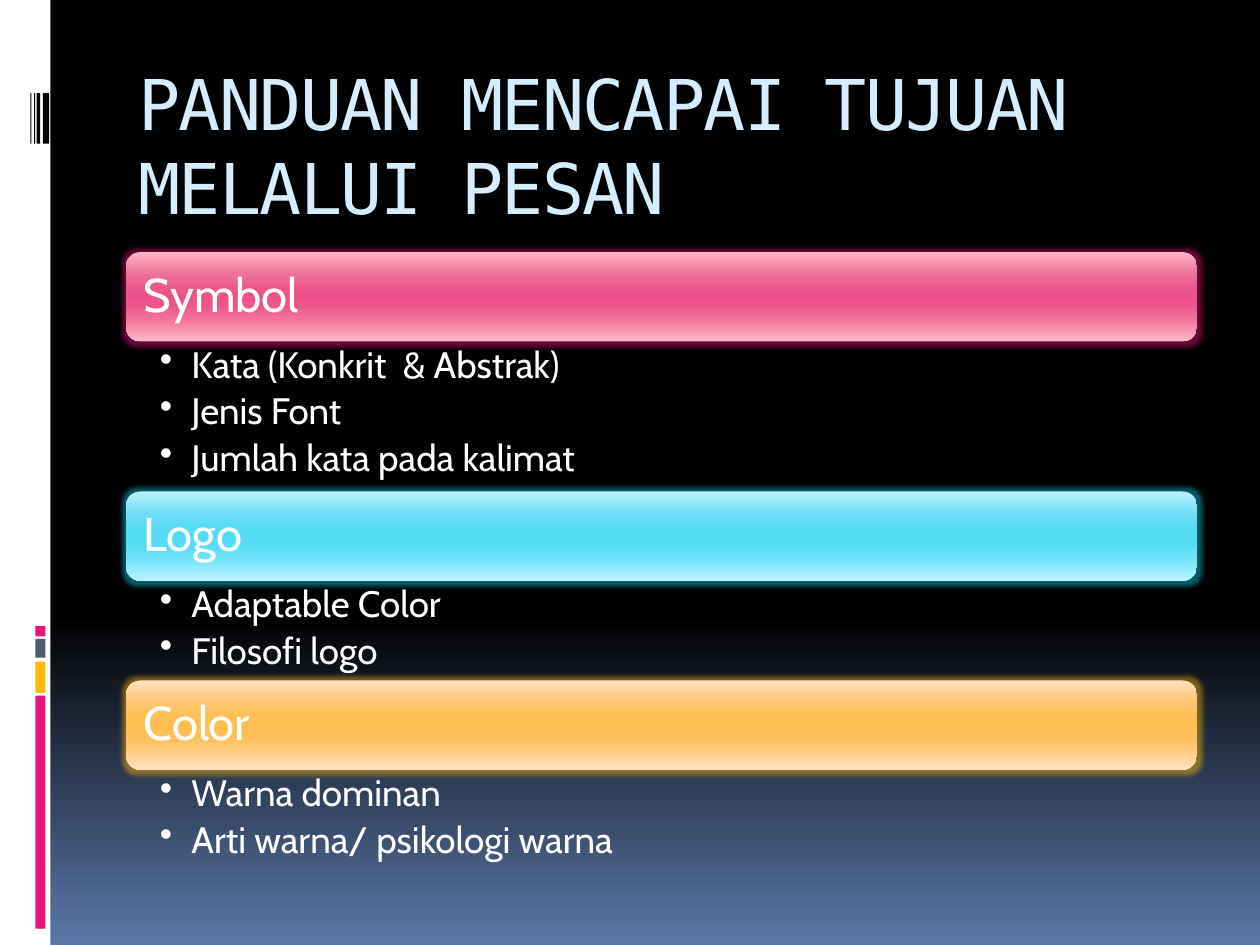
from lxml import etree
from pptx import Presentation
from pptx import util as u
from pptx.dml.color import RGBColor
from pptx.enum import shapes, text
from pptx.oxml import ns

Inches, Pt = u.Inches, u.Pt

WHITE = RGBColor(0xFF, 0xFF, 0xFF)
BLACK = RGBColor(0x00, 0x00, 0x00)
PINK = RGBColor(0xEA, 0x15, 0x7A)
GOLD = RGBColor(0xFE, 0xB8, 0x0A)
SLATE = RGBColor(0x4E, 0x5B, 0x6F)
CYAN = RGBColor(0x10, 0xCF, 0xEB)
PALE = RGBColor(0xD6, 0xEC, 0xFF)
DUSK = RGBColor(0x5B, 0x77, 0xA8)

SANS, MONO = "Cabin", "DejaVu Sans Mono"
BAR_H = 0.71
STOPS = (0, 25, 40, 50, 60, 75, 100)

# Heading, glow, gradient colours, list height, list items
GROUPS = [
    ("Symbol", PINK, "FFB6C9 ED7198 EC568B EC5289 EC568B F2729A FFB6C9", 1.19,
     ["Kata (Konkrit  & Abstrak)", "Jenis Font", "Jumlah kata pada kalimat"]),
    ("Logo", CYAN, "BBF1FF 70DFF6 56DCF5 51DCF5 56DCF5 71E3FB BBF1FF", 0.79,
     ["Adaptable Color", "Filosofi logo"]),
    ("Color", GOLD, "FFE1BF FEC570 FEBF55 FEBE51 FEBF55 FFC775 FFE1BF", 0.79,
     ["Warna dominan", "Arti warna/ psikologi warna"]),
]


def apply(obj, vals):
    for name, val in vals.items():
        setattr(obj, name, val)


def add_xml(parent, tag, **attrs):
    return etree.SubElement(parent, ns.qn(tag), attrs)


def blend(fill, root, stops):
    """Fill from top to bottom with (percent, colour) stops."""
    fill.gradient()
    fill.gradient_angle = 270
    box = root.find(".//" + ns.qn("a:gsLst"))
    for old in list(box):
        box.remove(old)
    for pos, tone in stops:
        stop = add_xml(box, "a:gs", pos=str(pos * 1000))
        add_xml(stop, "a:srgbClr", val=str(tone))


def add_box(slide, kind, box):
    shape = slide.shapes.add_shape(kind, *map(Inches, box))
    shape.shadow.inherit = False
    shape.line.fill.background()
    return shape


def add_text(slide, box, lines, size, after, insets, anchor):
    area = slide.shapes.add_textbox(*map(Inches, box))
    frame = area.text_frame
    sides = ("margin_left", "margin_top", "margin_right", "margin_bottom")
    apply(frame, {"word_wrap": True, "vertical_anchor": anchor,
                  **dict(zip(sides, map(Inches, insets)))})
    frame.text = "\n".join(lines)
    for para in frame.paragraphs:
        apply(para, {"line_spacing": 0.9, "space_after": Pt(after)})
        apply(para.font, {"name": SANS, "size": Pt(size)})
        para.font.color.rgb = WHITE
    return frame


def draw_side(slide, box):
    left, top, wide, high = box
    parts = [(0, 0, wide, high, WHITE)]
    # Coloured blocks
    parts += [(0.28, y, 0.08, h, tone) for y, h, tone in (
        (5.52, 1.85, PINK), (5.25, 0.25, GOLD),
        (5.07, 0.15, SLATE), (4.97, 0.08, PINK))]
    # Thin stripes
    parts += [(x, 0.74, w, 0.4, BLACK) for x, w in (
        (0.34, 0.05), (0.29, 0.03), (0.27, 0.01), (0.24, 0.01))]
    for x, y, w, h, tone in parts:
        shape = add_box(slide, shapes.MSO_SHAPE.RECTANGLE,
                        (left + x, top + y, w, h))
        shape.fill.solid()
        shape.fill.fore_color.rgb = tone


def draw_title(slide, box):
    title = slide.shapes.title
    apply(title, dict(zip(("left", "top", "width", "height"),
                          map(Inches, box))))
    frame = title.text_frame
    apply(frame, {"word_wrap": True, "margin_top": Inches(0.08),
                  "auto_size": text.MSO_AUTO_SIZE.NONE,
                  "vertical_anchor": text.MSO_ANCHOR.TOP})
    frame.text = "PANDUAN MENCAPAI TUJUAN MELALUI PESAN"
    para = frame.paragraphs[0]
    para.alignment = text.PP_ALIGN.LEFT
    font = para.runs[0].font
    apply(font, {"name": MONO, "size": Pt(40)})
    font.color.rgb = PALE
    para.runs[0].font._element.set("spc", "-100")


def draw_group(slide, box, head, glow, tones, items):
    left, top, wide, high = box
    # Glowing bar
    bar = add_box(slide, shapes.MSO_SHAPE.ROUNDED_RECTANGLE,
                  (left, top, wide, BAR_H))
    blend(bar.fill, bar.element, zip(STOPS, tones.split()))
    effects = bar.element.find(".//" + ns.qn("a:effectLst"))
    halo = add_xml(effects, "a:glow", rad=str(Inches(0.07)))
    tint = add_xml(halo, "a:srgbClr", val=str(glow))
    add_xml(tint, "a:alpha", val="45000")
    # Heading
    pad = 0.03
    add_text(slide, (left + pad, top + pad, wide - 2 * pad, BAR_H - 2 * pad),
             [head], 27, 0, [0.11] * 4, text.MSO_ANCHOR.MIDDLE)
    # Bullet list
    frame = add_text(slide, (left, top + BAR_H, wide, high - BAR_H), items,
                     21, 4, (0.27, 0.04, 0.21, 0.04), text.MSO_ANCHOR.TOP)
    for para in frame.paragraphs:
        para.level = 1
        props = para._p.get_or_add_pPr()
        props.set("marL", str(Inches(0.25)))
        props.set("indent", str(Inches(-0.25)))
        mark = etree.Element(ns.qn("a:buChar"), char="•")
        props.append(mark)


def main():
    deck = Presentation()
    apply(deck, {"slide_width": Inches(10), "slide_height": Inches(7.5)})
    slide = deck.slides.add_slide(deck.slide_layouts[5])
    blend(slide.background.fill, slide.element,
          [(0, BLACK), (65, BLACK), (100, DUSK)])
    draw_side(slide, (0, 0, 0.4, 7.5))
    draw_title(slide, (1, 0.4, 8.5, 1))
    top = 2
    for head, glow, tones, list_h, items in GROUPS:
        high = BAR_H + list_h
        draw_group(slide, (1, top, 8.5, high), head, glow, tones, items)
        top += high
    deck.save("out.pptx")


if __name__ == "__main__":
    main()
